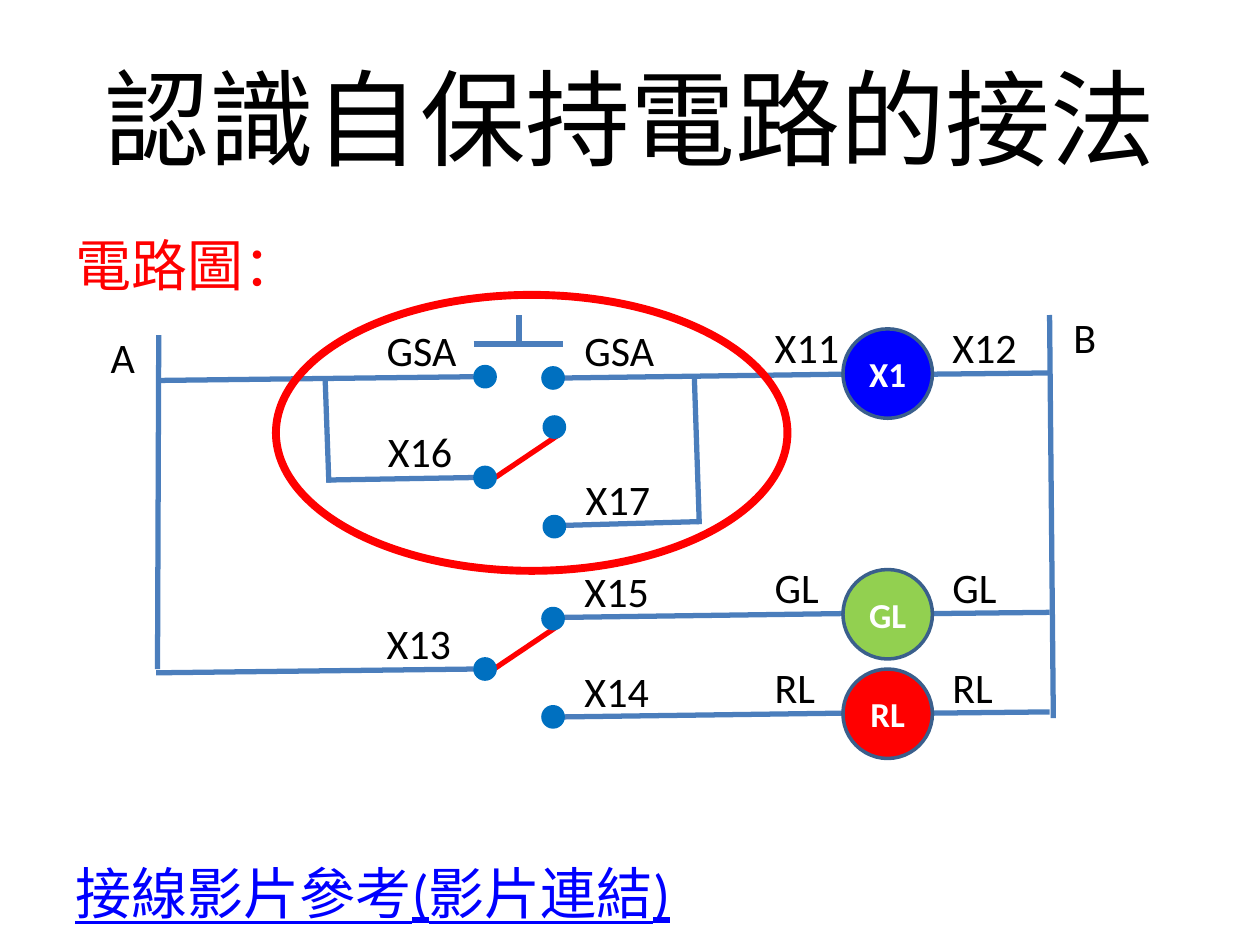
from pptx import Presentation
from pptx.dml.color import RGBColor
from pptx.enum.shapes import MSO_CONNECTOR, MSO_SHAPE
from pptx.enum.text import MSO_ANCHOR, PP_ALIGN
from pptx.oxml.ns import qn
from pptx.util import Pt
from lxml import etree

PX = 9144
BLACK = RGBColor(0, 0, 0)
WHITE = RGBColor(255, 255, 255)
RED = RGBColor(255, 0, 0)
BLUE = RGBColor(0, 0, 255)
GREEN = RGBColor(0x92, 0xD0, 0x50)
WIRE = RGBColor(0x4B, 0x7E, 0xBC)
DOT = RGBColor(0x00, 0x70, 0xC0)
EDGE = RGBColor(0x3A, 0x5F, 0x8C)
CJK = "Noto Sans CJK JP"

deck = Presentation()
deck.slide_width, deck.slide_height = 1000 * PX, 750 * PX
slide = deck.slides.add_slide(deck.slide_layouts[6])
shapes = slide.shapes


def write(box, text, size, color, face="Calibri"):
    frame = box.text_frame
    para = frame.paragraphs[0]
    run = para.add_run()
    run.text = text
    if face == CJK or size == 32:
        etree.SubElement(run.font._element, qn("a:ea"), typeface=CJK)
    para.font.name = face
    para.font.size = Pt(size)
    para.font.color.rgb = color
    return para


def oval(x, y, w, h, fill, edge, width):
    ring = shapes.add_shape(MSO_SHAPE.OVAL, x * PX, y * PX, w * PX, h * PX)
    ring.shadow.inherit = False
    if fill is None:
        ring.fill.background()
    else:
        ring.fill.solid()
        ring.fill.fore_color.rgb = fill
    ring.line.color.rgb = edge
    ring.line.width = Pt(width)
    return ring


for text, y, h, size, color, face in [
    ("認識自保持電路的接法", 30, 125, 60, BLACK, CJK),
    ("電路圖：", 175, 70, 32, RED, CJK),
    ("接線影片參考(影片連結)", 673, 70, 32, BLUE, "Calibri"),
]:
    box = shapes.add_textbox(50 * PX, y * PX, 900 * PX, h * PX)
    box.text_frame.word_wrap = True
    box.text_frame.vertical_anchor = MSO_ANCHOR.MIDDLE
    para = write(box, text, size, color, face)
    if size == 60:
        para.alignment = PP_ALIGN.CENTER
    if color == BLUE:
        para.font.underline = True

wires = [
    (125, 531, 126, 266), (836, 570, 833, 250),
    (376, 531, 124, 534), (376, 299, 124, 302),
    (377, 379, 259, 381), (261, 383, 258, 299),
    (555, 414, 448, 417), (555, 416, 551, 297),
    (376, 273, 447, 273), (412, 274, 412, 250),
]
for y in (297, 487, 566):
    wires += [(669, y, 447, y + 3), (740, y, 833, y - 1)]
arms = [(392, 531, 444, 496), (393, 379, 445, 344)]

for color, group in ((WIRE, wires), (RED, arms)):
    for ends in group:
        line = shapes.add_connector(MSO_CONNECTOR.STRAIGHT, *[n * PX for n in ends])
        line.line.color.rgb = color
        line.line.width = Pt(3)
        etree.SubElement(line._element.spPr, qn("a:effectLst"))

for x, y in [(377, 523), (431, 483), (431, 561), (377, 291),
             (431, 292), (377, 371), (432, 331), (432, 410)]:
    oval(x, y, 16, 16, DOT, DOT, 2)

for name, y, fill in [("X1", 261, BLUE), ("GL", 452, GREEN), ("RL", 531, RED)]:
    lamp = oval(669, y, 71, 71, fill, EDGE, 2)
    frame = lamp.text_frame
    frame.margin_left = frame.margin_right = 0
    frame.vertical_anchor = MSO_ANCHOR.MIDDLE
    para = write(lamp, name, 20, WHITE)
    para.alignment = PP_ALIGN.CENTER
    para.font.bold = True

for text, x, y, w in [
    ("A", 78, 258, 40), ("B", 842, 242, 38),
    ("X11", 605, 250, 72), ("X12", 746, 250, 72),
    ("GL", 605, 441, 56), ("GL", 746, 441, 56),
    ("RL", 605, 520, 53), ("RL", 746, 520, 53),
    ("GSA", 297, 253, 76), ("GSA", 454, 253, 76),
    ("X16", 298, 333, 72), ("X17", 455, 371, 72),
    ("X13", 297, 485, 72), ("X15", 454, 444, 72),
    ("X14", 454, 523, 72),
]:
    label = shapes.add_textbox(x * PX, y * PX, w * PX, 50 * PX)
    label.text_frame.word_wrap = False
    write(label, text, 24, BLACK)

oval(219, 234, 406, 219, None, RED, 4.5)

deck.save("out.pptx")
